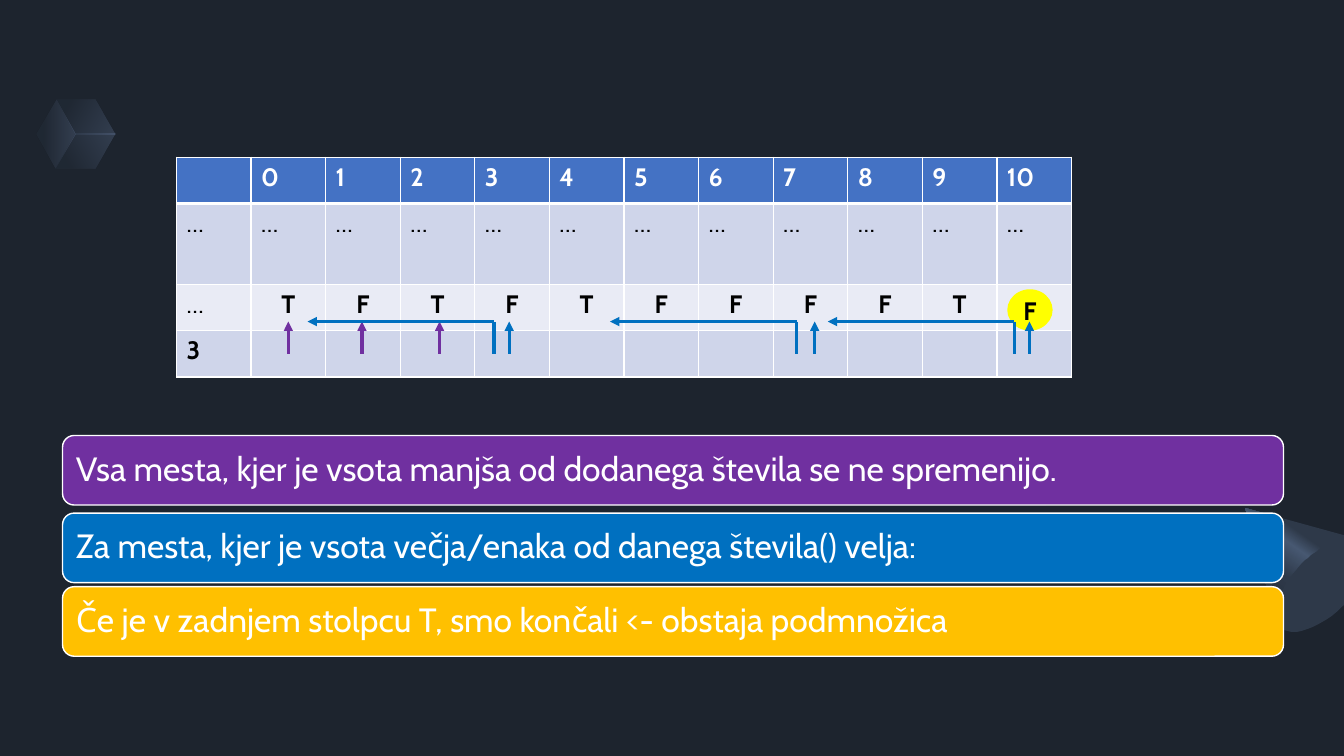
from lxml import etree
from pptx import Presentation
from pptx import util as u
from pptx.dml import color
from pptx.enum import shapes, text
from pptx.oxml import ns

PX = 9144
FONT = "Cabin"
COLORS = {
    "background": "1D242E",
    "slate": "2E3949",
    "steel": "475871",
    "mist": "8FAADC",
    "header": "4472C4",
    "band": "CFD5EA",
    "light": "E9EBF5",
    "purple": "7030A0",
    "blue": "0070C0",
    "gold": "FFC000",
    "yellow": "FFFF00",
    "white": "FFFFFF",
    "black": "000000",
}


def px(n):
    return u.Emu(n * PX)


def rgb(name):
    return color.RGBColor.from_string(COLORS[name])


def element(parent, tag, **attrs):
    return etree.SubElement(parent, ns.qn(tag), {k: str(v) for k, v in attrs.items()})


def bezier(p0, p1, p2, p3, steps=12):
    curve = []
    for i in range(1, steps + 1):
        t = i / steps
        weights = ((1 - t) ** 3, 3 * t * (1 - t) ** 2, 3 * t * t * (1 - t), t ** 3)
        curve.append(tuple(sum(w * p[axis] for w, p in zip(weights, (p0, p1, p2, p3)))
                           for axis in (0, 1)))
    return curve


class SlideBuilder:
    def __init__(self, prs):
        self.s = prs.slides.add_slide(prs.slide_layouts[6])
        fill = self.s.background.fill
        fill.solid()
        fill.fore_color.rgb = rgb("background")

    def label(self, tf, words, size, ink, bold=False, align=None):
        tf.text = words
        p = tf.paragraphs[0]
        p.alignment = align
        for r in p.runs:
            r.font.name = FONT
            r.font.size = u.Pt(size)
            r.font.bold = bold
            r.font.color.rgb = rgb(ink)
        return p

    def paint(self, sp, fill, line=None):
        sp.shadow.inherit = False
        sp.fill.solid()
        sp.fill.fore_color.rgb = rgb(fill)
        if line:
            sp.line.color.rgb = rgb(line)
            sp.line.width = u.Pt(1)
        else:
            sp.line.fill.background()

    def polygon(self, points, fill="slate"):
        builder = self.s.shapes.build_freeform(*points[0], scale=PX)
        builder.add_line_segments(points[1:], close=True)
        sp = builder.convert_to_shape()
        self.paint(sp, fill)
        return sp

    def gradient(self, sp, stops, angle, alpha=100):
        solid = sp._element.spPr.find(ns.qn("a:solidFill"))
        grad = etree.Element(ns.qn("a:gradFill"), {"rotWithShape": "1"})
        stop_list = element(grad, "a:gsLst")
        for pos, name in stops:
            gs = element(stop_list, "a:gs", pos=pos * 1000)
            clr = element(gs, "a:srgbClr", val=COLORS[name])
            element(clr, "a:alpha", val=alpha * 1000)
        element(grad, "a:lin", ang=angle * 60000, scaled=0)
        solid.getparent().replace(solid, grad)

    def line(self, x1, y1, x2, y2, ink, arrow=True):
        cx = self.s.shapes.add_connector(
            shapes.MSO_CONNECTOR.STRAIGHT, px(x1), px(y1), px(x2), px(y2))
        cx.line.color.rgb = rgb(ink)
        cx.line.width = u.Pt(2.25)
        if arrow:
            element(cx.line._get_or_add_ln(), "a:tailEnd", type="triangle")
        element(cx._element.spPr, "a:effectLst")

    def bar(self, x, y, w, h, words, fill):
        sp = self.s.shapes.add_shape(
            shapes.MSO_SHAPE.ROUNDED_RECTANGLE, px(x), px(y), px(w), px(h))
        self.paint(sp, fill, "white")
        tf = sp.text_frame
        tf.word_wrap = True
        tf.vertical_anchor = text.MSO_ANCHOR.MIDDLE
        p = self.label(tf, words, 24, "white", align=text.PP_ALIGN.LEFT)
        p.line_spacing = 0.9

    def marker(self, x, y, w, h, words, fill):
        sp = self.s.shapes.add_shape(shapes.MSO_SHAPE.OVAL, px(x), px(y), px(w), px(h))
        self.paint(sp, fill)
        tf = sp.text_frame
        tf.margin_left = tf.margin_right = tf.margin_top = tf.margin_bottom = 0
        tf.vertical_anchor = text.MSO_ANCHOR.MIDDLE
        self.label(tf, words, 18, "black", True, text.PP_ALIGN.CENTER)

    def border(self, cell, bottom):
        tc_pr = cell._tc.get_or_add_tcPr()
        for i, side in enumerate("LRTB"):
            width = bottom if side == "B" else 1
            ln = element(tc_pr, f"a:ln{side}", w=u.Pt(width))
            element(element(ln, "a:solidFill"), "a:srgbClr", val=COLORS["white"])
            tc_pr.insert(i, ln)

    def table(self, x, y, col_width, heights, rows, fills):
        cols = len(rows[0])
        table = self.s.shapes.add_table(
            len(rows), cols, px(x), px(y), px(col_width * cols), px(sum(heights))).table
        for col in table.columns:
            col.width = px(col_width)
        for i, (row, height, fill) in enumerate(zip(rows, heights, fills)):
            table.rows[i].height = px(height)
            for j, words in enumerate(row):
                cell = table.cell(i, j)
                cell.fill.solid()
                cell.fill.fore_color.rgb = rgb(fill)
                self.border(cell, 1 if i else 3)
                align = text.PP_ALIGN.CENTER if words in ("T", "F") else None
                self.label(cell.text_frame, words, 18, "black" if i else "white",
                           words != "…", align)


def main():
    prs = Presentation()
    prs.slide_width, prs.slide_height = px(1333), px(750)
    slide = SlideBuilder(prs)

    cube_faces = [
        ([(95, 99), (56, 99), (75, 133), (115, 133)], 30),
        ([(55, 167), (36, 133), (56, 99), (75, 133)], 0),
        ([(115, 133), (95, 167), (55, 167), (75, 133)], 330),
    ]
    for points, angle in cube_faces:
        face = slide.polygon(points)
        slide.gradient(face, [(20, "slate"), (100, "mist")], angle, 20)

    cone = slide.polygon([(1235, 504), (1333, 531), (1333, 600), (1266, 617)])
    slide.gradient(cone, [(30, "slate"), (40, "steel"), (60, "slate"),
                          (100, "background")], 125)
    base = [(1333, 534), (1333, 600)]
    for curve in [((1309, 624), (1281, 634), (1270, 622)),
                  ((1258, 611), (1268, 583), (1291, 559)),
                  ((1302, 548), (1315, 540), (1326, 536))]:
        base += bezier(base[-1], *curve)
    slide.polygon(base)

    rows = [
        ["", *map(str, range(11))],
        ["…"] * 12,
        ["…", *"TFTFTFFFFTF"],
        ["3"] + [""] * 11,
    ]
    slide.table(175, 156, 74, [46, 80, 46, 46], rows, ["header", "band", "light", "band"])

    notes = [
        (432, "Vsa mesta, kjer je vsota manjša od dodanega števila se ne spremenijo.", "purple"),
        (509, "Za mesta, kjer je vsota večja/enaka od danega števila() velja:", "blue"),
        (582, "Če je v zadnjem stolpcu T, smo končali <- obstaja podmnožica", "gold"),
    ]
    for y, words, fill in notes:
        slide.bar(62, y, 1211, 69, words, fill)

    slide.marker(999, 287, 45, 41, "F", "yellow")

    low, high, jump = 351, 319, 185
    for x in (286, 359, 436):
        slide.line(x, low, x, high, "purple")
    for x, own in ((490, 505), (790, 808), (1006, 1021)):
        slide.line(x, low, x, high, "blue", arrow=False)
        slide.line(x, high, x - jump, high, "blue")
        slide.line(own, low, own, high, "blue")

    prs.save("out.pptx")


if __name__ == "__main__":
    main()
